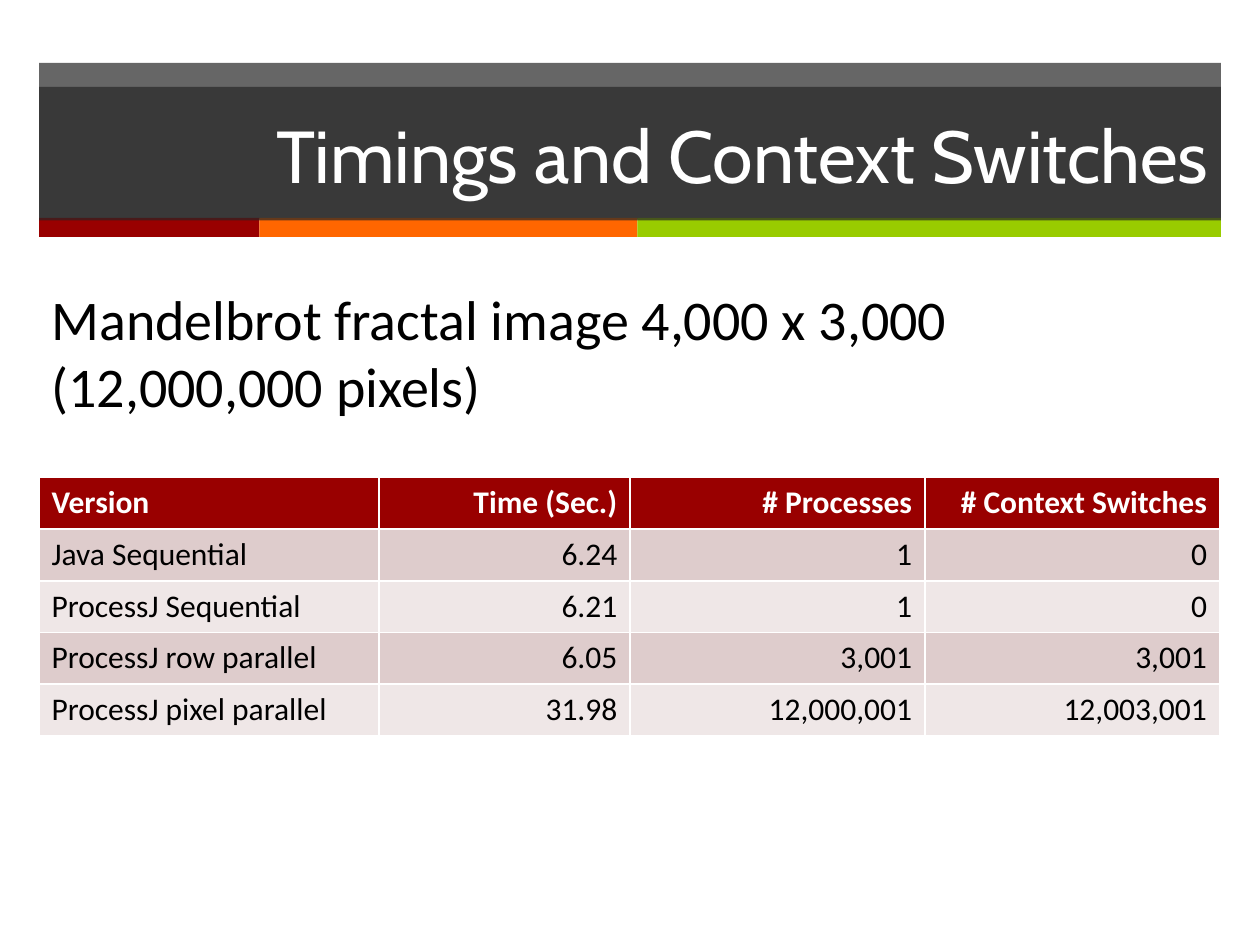
"""Build the slide on timings and context switches."""
import lxml.etree
import pptx
import pptx.dml.color
import pptx.enum.shapes
import pptx.enum.text
import pptx.oxml.ns
import pptx.util

RGBColor = pptx.dml.color.RGBColor
Inches = pptx.util.Inches
ALIGN = pptx.enum.text.PP_ALIGN

WHITE = RGBColor(0xFF, 0xFF, 0xFF)
BLACK = RGBColor(0x00, 0x00, 0x00)
CHARCOAL = RGBColor(0x26, 0x26, 0x26)
RED = RGBColor(0x99, 0x00, 0x00)
ORANGE = RGBColor(0xFF, 0x66, 0x00)
GREEN = RGBColor(0x99, 0xCC, 0x00)
ROSE = RGBColor(0xDE, 0xCC, 0xCC)
PALE_ROSE = RGBColor(0xEF, 0xE7, 0xE7)

TITLE = "Timings and Context Switches"
DESCRIPTION = ["Mandelbrot fractal image 4,000 x 3,000", "(12,000,000 pixels)"]
ROWS = [
    ("Version", "Time (Sec.)", "# Processes", "# Context Switches"),
    ("Java Sequential", "6.24", "1", "0"),
    ("ProcessJ Sequential", "6.21", "1", "0"),
    ("ProcessJ row parallel", "6.05", "3,001", "3,001"),
    ("ProcessJ pixel parallel", "31.98", "12,000,001", "12,003,001"),
]
COLUMN_WIDTHS = [2.7, 1.99, 2.34, 2.34]
STRIPES = [(1.75, RED), (3, ORANGE), (4.63, GREEN)]

SLIDE_WIDTH, SLIDE_HEIGHT = 10, 7.5
MARGIN = 0.31
CONTENT_WIDTH = SLIDE_WIDTH - 2 * MARGIN
ROW_HEIGHT = 0.41

TITLE_FONT = {"name": "Cabin", "size": pptx.util.Pt(42), "bold": False}
BODY_FONT = {"name": "Calibri", "size": pptx.util.Pt(32), "bold": False}
HEADER_FONT = {"name": "Calibri", "size": pptx.util.Pt(18), "bold": True}
CELL_FONT = {**HEADER_FONT, "bold": False}


def write_text(frame, lines, font, color, align):
    """Write lines as paragraphs in one format."""
    frame.text = "\n".join(lines)
    for paragraph in frame.paragraphs:
        paragraph.alignment = align
        for run in paragraph.runs:
            for key, value in font.items():
                setattr(run.font, key, value)
            run.font.color.rgb = color


def fill_solid(shape, color, opacity=100):
    """Fill a shape with a colour at an opacity in percent."""
    shape.fill.solid()
    shape.fill.fore_color.rgb = color
    if opacity < 100:
        tag = pptx.oxml.ns.qn("a:srgbClr")
        for element in shape.element.spPr.iter(tag):
            alpha = lxml.etree.SubElement(element, pptx.oxml.ns.qn("a:alpha"))
            alpha.set("val", str(opacity * 1000))


def add_band(slide, left, top, width, height, color, opacity=100):
    """Add a plain rectangle without outline."""
    band = slide.shapes.add_shape(
        pptx.enum.shapes.MSO_SHAPE.RECTANGLE,
        *map(Inches, (left, top, width, height)))
    band.shadow.inherit = False
    band.line.fill.background()
    fill_solid(band, color, opacity)


def add_header(slide):
    """Add the dark band, the coloured stripes and the title over them."""
    add_band(slide, MARGIN, 0.5, CONTENT_WIDTH, 1.24, CHARCOAL, 70)
    left = MARGIN
    for width, color in STRIPES:
        add_band(slide, left, 1.73, width, 0.15, color)
        left += width
    title = slide.shapes.title
    title.left, title.top = Inches(MARGIN), Inches(0.69)
    title.width, title.height = Inches(CONTENT_WIDTH), Inches(1.06)
    fill_solid(title, CHARCOAL, 70)
    title.text_frame.vertical_anchor = pptx.enum.text.MSO_ANCHOR.MIDDLE
    write_text(title.text_frame, [TITLE], TITLE_FONT, WHITE, ALIGN.RIGHT)
    title.element.getparent().append(title.element)


def add_timings(slide):
    """Add the table of timings."""
    table = slide.shapes.add_table(
        len(ROWS), len(COLUMN_WIDTHS), Inches(MARGIN), Inches(3.79),
        Inches(CONTENT_WIDTH), Inches(ROW_HEIGHT * len(ROWS))).table
    for column, width in zip(table.columns, COLUMN_WIDTHS):
        column.width = Inches(width)
    for row_index, values in enumerate(ROWS):
        table.rows[row_index].height = Inches(ROW_HEIGHT)
        if row_index == 0:
            font, color, background = HEADER_FONT, WHITE, RED
        else:
            font, color = CELL_FONT, BLACK
            background = ROSE if row_index % 2 else PALE_ROSE
        for column_index, value in enumerate(values):
            cell = table.cell(row_index, column_index)
            cell.fill.solid()
            cell.fill.fore_color.rgb = background
            align = ALIGN.RIGHT if column_index else ALIGN.LEFT
            write_text(cell.text_frame, [value], font, color, align)


def add_description(slide):
    """Add the text above the table."""
    box = slide.shapes.add_textbox(
        *map(Inches, (MARGIN, 2.21, 7.4, 1.18)))
    box.text_frame.word_wrap = False
    box.text_frame.auto_size = pptx.enum.text.MSO_AUTO_SIZE.SHAPE_TO_FIT_TEXT
    write_text(box.text_frame, DESCRIPTION, BODY_FONT, BLACK, ALIGN.LEFT)


def main():
    """Build and save the presentation."""
    presentation = pptx.Presentation()
    presentation.slide_width = Inches(SLIDE_WIDTH)
    presentation.slide_height = Inches(SLIDE_HEIGHT)
    slide = presentation.slides.add_slide(presentation.slide_layouts[5])
    add_header(slide)
    add_timings(slide)
    add_description(slide)
    presentation.save("out.pptx")


if __name__ == "__main__":
    main()
